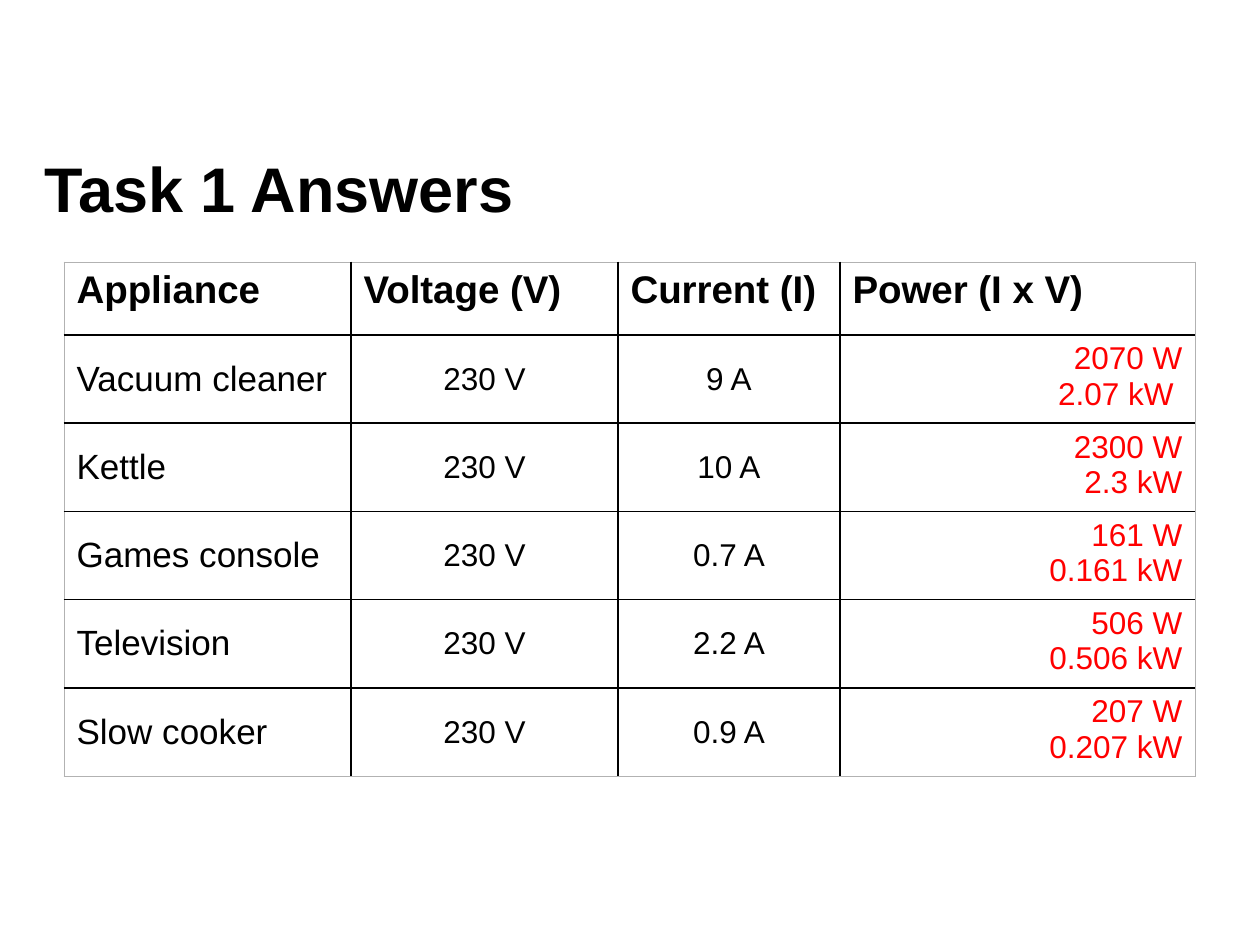
import lxml.etree
import pptx
import pptx.dml.color
import pptx.enum.text
import pptx.oxml.ns
import pptx.util

PX = 914400 // 126
BLACK = pptx.dml.color.RGBColor(0x00, 0x00, 0x00)
RED = pptx.dml.color.RGBColor(0xFF, 0x00, 0x00)
GREY = pptx.dml.color.RGBColor(0xB2, 0xB2, 0xB2)
WHITE = pptx.dml.color.RGBColor(0xFF, 0xFF, 0xFF)
FONT = "Arial"
ALIGN = pptx.enum.text.PP_ALIGN
ANCHOR = pptx.enum.text.MSO_ANCHOR

COL_WIDTHS = [287, 267, 222, 355]
ROW_HEIGHTS = [73, 83, 83, 83, 83, 83]
HEADINGS = ["Appliance", "Voltage (V)", "Current (I)", "Power (I x V)"]
APPLIANCES = [
    ("Vacuum cleaner", "230 V", "9 A", "2070 W\n2.07 kW "),
    ("Kettle", "230 V", "10 A", "2300 W\n2.3 kW"),
    ("Games console", "230 V", "0.7 A", "161 W\n0.161 kW"),
    ("Television", "230 V", "2.2 A", "506 W\n0.506 kW"),
    ("Slow cooker", "230 V", "0.9 A", "207 W\n0.207 kW"),
]
HEADING_STYLE = (22, True, BLACK, ALIGN.LEFT, ANCHOR.TOP)
COLUMN_STYLES = [
    (20, False, BLACK, ALIGN.LEFT, ANCHOR.MIDDLE),
    (18, False, BLACK, ALIGN.CENTER, ANCHOR.MIDDLE),
    (18, False, BLACK, ALIGN.CENTER, ANCHOR.MIDDLE),
    (18, False, RED, ALIGN.RIGHT, ANCHOR.TOP),
]


def write_text(tf, text, size, bold, color, align):
    """Write each line of text as one paragraph of one run."""
    for i, line in enumerate(text.split("\n")):
        p = tf.add_paragraph() if i else tf.paragraphs[0]
        p.alignment = align
        r = p.add_run()
        r.text = line
        r.font.name = FONT
        r.font.size = pptx.util.Pt(size)
        r.font.bold = bold
        r.font.color.rgb = color


def set_borders(cell, colors):
    """Draw the left, right, top and bottom borders of a cell."""
    tc_pr = cell._tc.get_or_add_tcPr()
    qn = pptx.oxml.ns.qn
    for i, (side, color) in enumerate(zip("LRTB", colors)):
        width = pptx.util.Pt(0.5 if color == GREY else 1)
        ln = lxml.etree.Element(qn("a:ln" + side), w=str(width))
        fill = lxml.etree.SubElement(ln, qn("a:solidFill"))
        lxml.etree.SubElement(fill, qn("a:srgbClr"), val=str(color))
        tc_pr.insert(i, ln)


def add_title(s, x, y, w, h):
    """Place the slide heading in the given box."""
    sp = s.shapes.add_textbox(x * PX, y * PX, w * PX, h * PX)
    tf = sp.text_frame
    tf.word_wrap = True
    tf.vertical_anchor = ANCHOR.MIDDLE
    write_text(tf, "Task 1 Answers", 36, True, BLACK, ALIGN.LEFT)
    tf.paragraphs[0].line_spacing = 0.9


def add_answers(s, x, y):
    """Place the table of appliance powers with its corner at x, y."""
    rows = [HEADINGS, *APPLIANCES]
    last_row, last_col = len(rows) - 1, len(HEADINGS) - 1
    frame = s.shapes.add_table(len(rows), len(HEADINGS), x * PX, y * PX,
                               sum(COL_WIDTHS) * PX, sum(ROW_HEIGHTS) * PX)
    table = frame.table
    table.first_row = False
    table.horz_banding = False
    for col, width in zip(table.columns, COL_WIDTHS):
        col.width = width * PX
    for row, height in zip(table.rows, ROW_HEIGHTS):
        row.height = height * PX
    for i, texts in enumerate(rows):
        for j, text in enumerate(texts):
            cell = table.cell(i, j)
            *style, anchor = COLUMN_STYLES[j] if i else HEADING_STYLE
            cell.vertical_anchor = anchor
            cell.fill.solid()
            cell.fill.fore_color.rgb = WHITE
            outer = (j == 0, j == last_col, i == 0, i == last_row)
            set_borders(cell, [GREY if edge else BLACK for edge in outer])
            write_text(cell.text_frame, text, *style)


def main():
    """Build the slide and save it."""
    prs = pptx.Presentation()
    prs.slide_width = 1260 * PX
    prs.slide_height = 945 * PX
    s = prs.slides.add_slide(prs.slide_layouts[6])
    add_title(s, 32, 146, 683, 93)
    add_answers(s, 64, 262)
    prs.save("out.pptx")


if __name__ == "__main__":
    main()
